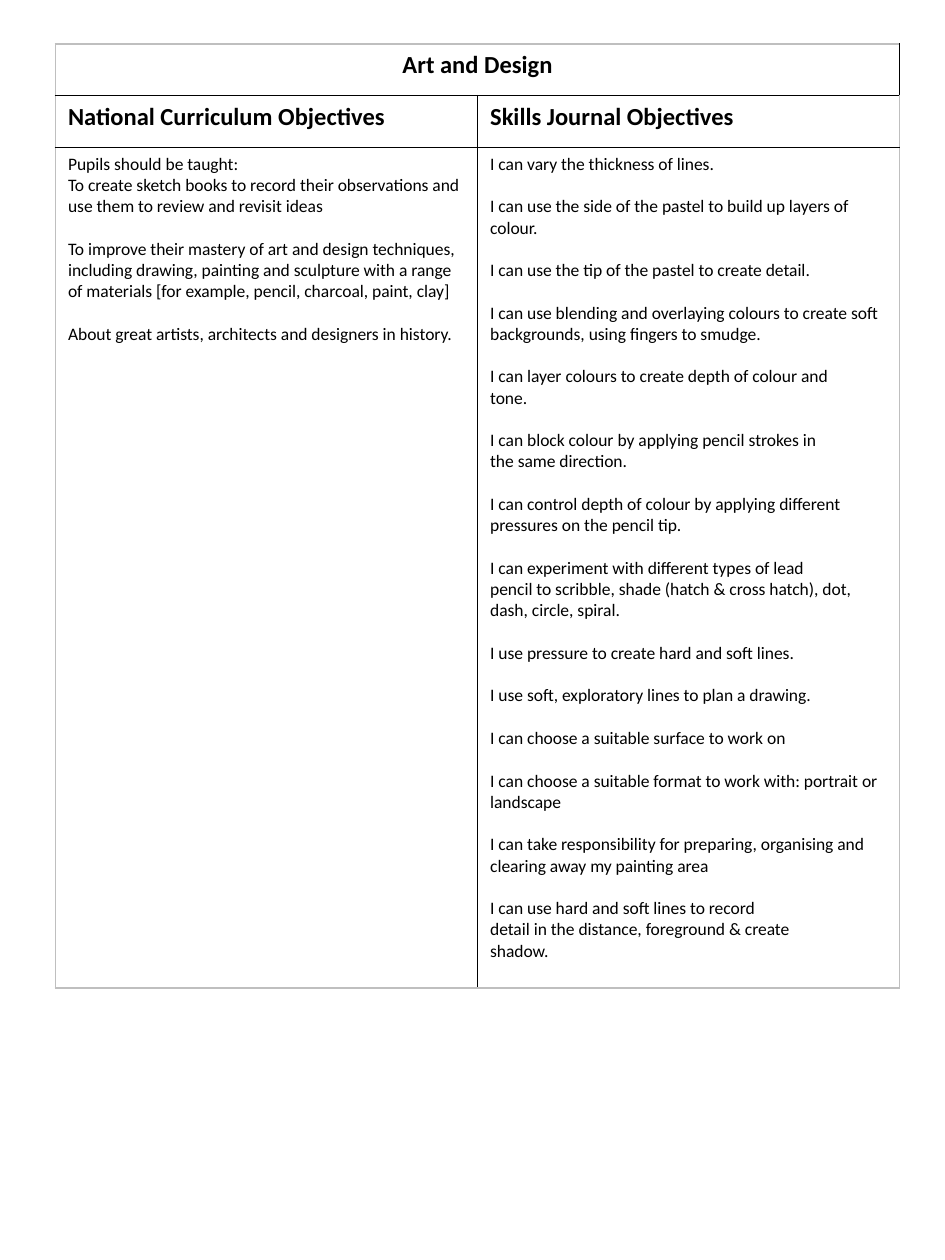
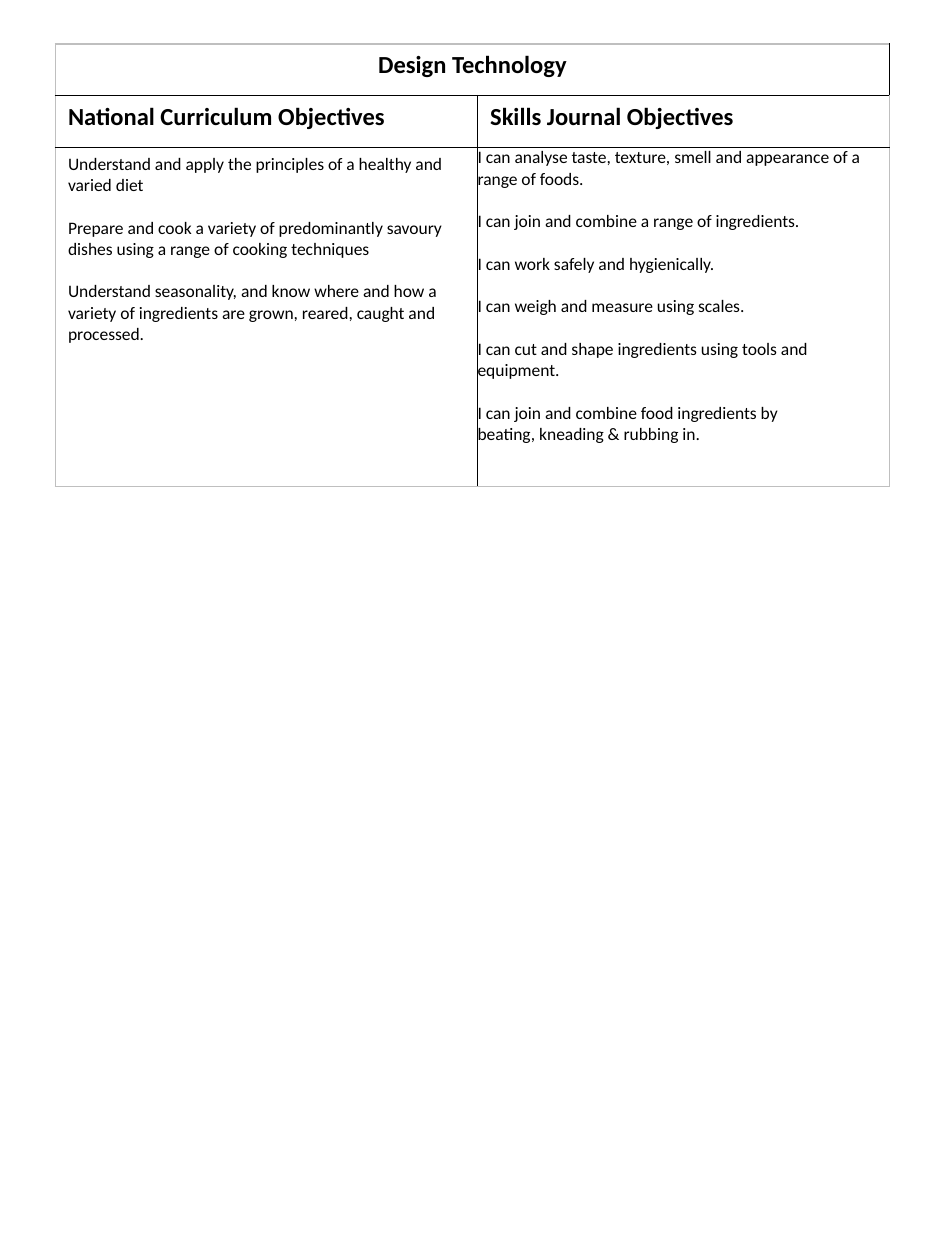
from lxml import etree
from pptx import Presentation
from pptx.dml.color import RGBColor
from pptx.enum.text import PP_ALIGN
from pptx.oxml.ns import qn
from pptx.util import Inches, Pt

CENTER = PP_ALIGN.CENTER
LEFT = PP_ALIGN.LEFT

ART_CURRICULUM = [
    "Pupils should be taught:\nTo create sketch books to record their observations and use them to review and revisit ideas",
    "To improve their mastery of art and design techniques, including drawing, painting and sculpture with a range of materials [for example, pencil, charcoal, paint, clay]",
    "About great artists, architects and designers in history.",
]
ART_SKILLS = [
    "I can vary the thickness of lines.",
    "I can use the side of the pastel to build up layers of\ncolour.",
    "I can use the tip of the pastel to create detail.",
    "I can use blending and overlaying colours to create soft\nbackgrounds, using fingers to smudge.",
    "I can layer colours to create depth of colour and\ntone.",
    "I can block colour by applying pencil strokes in\nthe same direction.",
    "I can control depth of colour by applying different\npressures on the pencil tip.",
    "I can experiment with different types of lead\npencil to scribble, shade (hatch & cross hatch), dot,\ndash, circle, spiral.",
    "I use pressure to create hard and soft lines.",
    "I use soft, exploratory lines to plan a drawing.",
    "I can choose a suitable surface to work on",
    "I can choose a suitable format to work with: portrait or landscape",
    "I can take responsibility for preparing, organising and clearing away my painting area",
    "I can use hard and soft lines to record\ndetail in the distance, foreground & create\nshadow.",
]
TECHNOLOGY_CURRICULUM = [
    "Understand and apply the principles of a healthy and varied diet",
    "Prepare and cook a variety of predominantly savoury dishes using a range of cooking techniques",
    "Understand seasonality, and know where and how a variety of ingredients are grown, reared, caught and processed.",
]
TECHNOLOGY_SKILLS = [
    "I can analyse taste, texture, smell and appearance of a range of foods.",
    "I can join and combine a range of ingredients.",
    "I can work safely and hygienically.",
    "I can weigh and measure using scales.",
    "I can cut and shape ingredients using tools and\nequipment.",
    "I can join and combine food ingredients by\nbeating, kneading & rubbing in.",
]


def colour(value):
    return RGBColor.from_string(value)


class ObjectivesDeck:
    """Holds the shared table style and the current slide."""

    INK = "000000"
    FRAME = "BFBFBF"
    HEADING = {"name": "Calibri", "size": Pt(14), "bold": True}
    BODY = {"name": "Calibri", "size": Pt(10), "bold": False}
    PLAIN_TABLE = {"first_row": False, "horz_banding": False}
    NO_MARGINS = dict.fromkeys(
        ("margin_left", "margin_right", "margin_top", "margin_bottom"), 0
    )
    ITEM_GAP = Pt(12.2)
    HEADING_HEIGHT = 0.41

    def __init__(self):
        self.presentation = Presentation()
        self.presentation.slide_width = Inches(7.5)
        self.presentation.slide_height = Inches(10)
        self.slide = None

    def add_slide(self):
        blank_layout = self.presentation.slide_layouts[6]
        self.slide = self.presentation.slides.add_slide(blank_layout)

    def apply(self, target, values):
        for name, value in values.items():
            setattr(target, name, value)

    def fill_cell(self, cell, items, font, alignment=LEFT):
        frame = cell.text_frame
        frame.word_wrap = True
        paragraph = frame.paragraphs[0]
        for item_index, item in enumerate(items):
            for line_index, line in enumerate(item.split("\n")):
                if item_index or line_index:
                    paragraph = frame.add_paragraph()
                paragraph.alignment = alignment
                if item_index and not line_index:
                    paragraph.space_before = self.ITEM_GAP
                run = paragraph.add_run()
                run.text = line
                self.apply(run.font, font)
                run.font.color.rgb = colour(self.INK)

    def border(self, cell, outer_edges):
        properties = cell._tc.get_or_add_tcPr()
        for edge, is_outer in outer_edges.items():
            line = etree.SubElement(properties, qn(f"a:{edge}"), w=str(Pt(1)))
            fill = etree.SubElement(line, qn("a:solidFill"))
            shade = colour(self.FRAME if is_outer else self.INK)
            etree.SubElement(fill, qn("a:srgbClr"), val=str(shade))
        cell.fill.background()

    def add_objectives(self, title, curriculum, skills, widths, body_height, skills_format):
        heights = [self.HEADING_HEIGHT, self.HEADING_HEIGHT, body_height]
        table = self.slide.shapes.add_table(
            len(heights), len(widths), Inches(0.44), Inches(0.35),
            Inches(sum(widths)), Inches(sum(heights)),
        ).table
        self.apply(table, self.PLAIN_TABLE)
        for column, width in zip(table.columns, widths):
            column.width = Inches(width)
        for row, height in zip(table.rows, heights):
            row.height = Inches(height)

        last_row, last_column = len(heights) - 1, len(widths) - 1
        for row in range(len(heights)):
            for column in range(len(widths)):
                self.border(table.cell(row, column), {
                    "lnL": column == 0,
                    "lnR": column == last_column,
                    "lnT": row == 0,
                    "lnB": row == last_row,
                })

        table.cell(0, 0).merge(table.cell(0, last_column))
        self.fill_cell(table.cell(0, 0), [title], self.HEADING, CENTER)
        columns = [
            ("National Curriculum Objectives", curriculum),
            ("Skills Journal Objectives", skills),
        ]
        for index, (heading, items) in enumerate(columns):
            self.fill_cell(table.cell(1, index), [heading], self.HEADING)
            self.fill_cell(table.cell(2, index), items, self.BODY)
        self.apply(table.cell(2, last_column), skills_format)


def main():
    deck = ObjectivesDeck()
    subjects = [
        ("Art and Design", ART_CURRICULUM, ART_SKILLS, [3.35, 3.35], 6.67, {}),
        ("Design Technology", TECHNOLOGY_CURRICULUM, TECHNOLOGY_SKILLS,
         [3.35, 3.27], 2.69, deck.NO_MARGINS),
    ]
    for subject in subjects:
        deck.add_slide()
        deck.add_objectives(*subject)
    deck.presentation.save("out.pptx")


if __name__ == "__main__":
    main()
